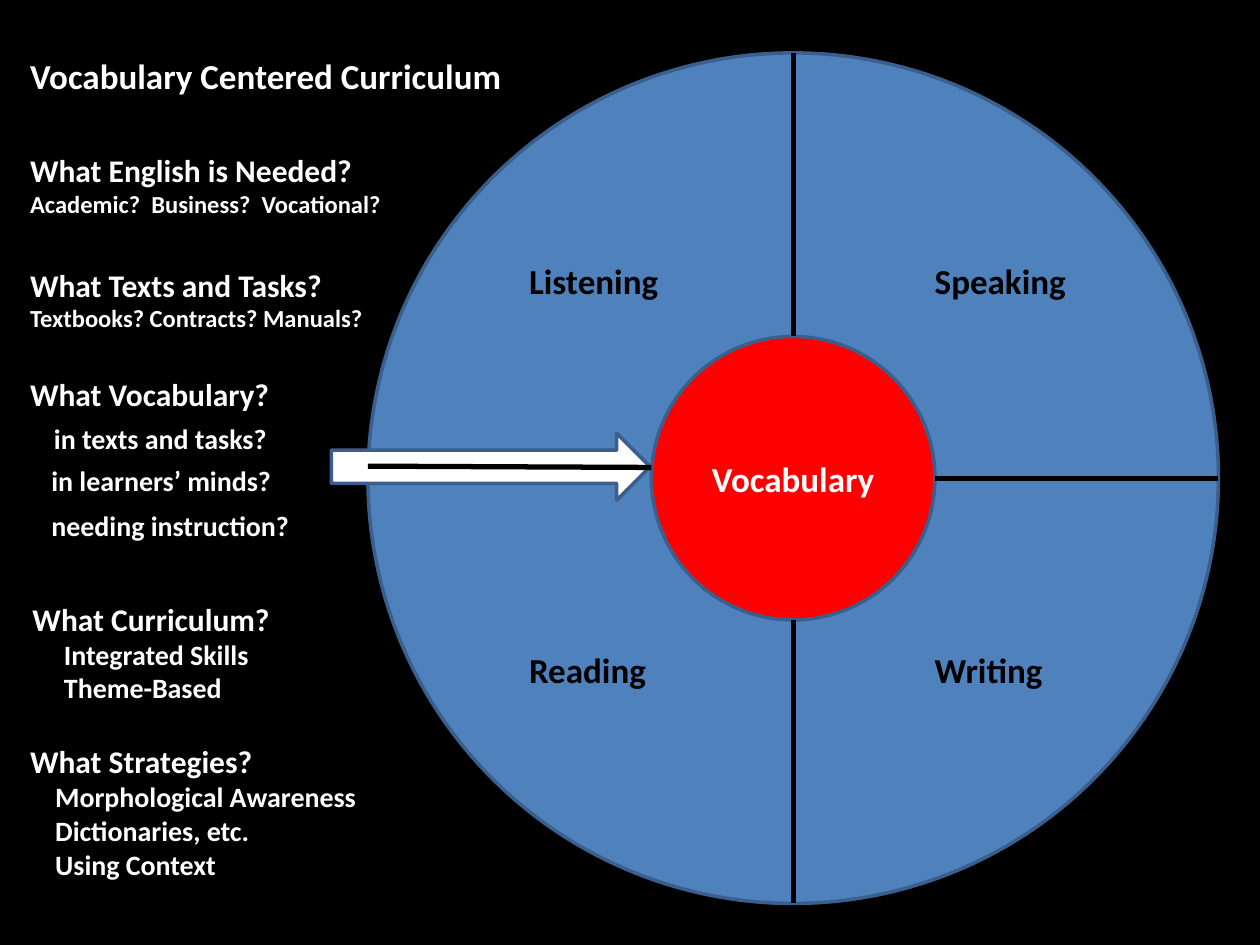
from dataclasses import dataclass

from lxml.etree import SubElement
from pptx import Presentation
from pptx.dml.color import RGBColor
from pptx.enum.shapes import MSO_CONNECTOR, MSO_SHAPE
from pptx.enum.text import MSO_ANCHOR, PP_ALIGN
from pptx.oxml.ns import qn
from pptx.util import Inches, Pt


@dataclass(frozen=True)
class Theme:
    black: str = "000000"
    white: str = "FFFFFF"
    wheel: str = "4F81BD"
    hub: str = "FF0000"
    outline: str = "3A5F8C"
    font: str = "Calibri"
    title: int = 20
    heading: int = 18
    item: int = 16
    detail: int = 14
    outline_width: int = 2
    spoke_width: int = 3


THEME = Theme()


def rgb(value):
    return RGBColor.from_string(value)


def write_text(tf, lines, color=THEME.white, align=PP_ALIGN.LEFT, wrap=True):
    tf.word_wrap = wrap
    for i, (text, size, indent) in enumerate(lines):
        p = tf.paragraphs[0] if i == 0 else tf.add_paragraph()
        p.alignment = align
        if indent:
            p._p.get_or_add_pPr().set("marL", str(Inches(indent)))
        r = p.add_run()
        r.text = text
        r.font.name = THEME.font
        r.font.size = Pt(size)
        r.font.bold = True
        r.font.color.rgb = rgb(color)


def add_text(s, left, top, width, height, lines, **fmt):
    box = s.shapes.add_textbox(Inches(left), Inches(top), Inches(width), Inches(height))
    write_text(box.text_frame, lines, **fmt)


def add_outlined(s, kind, left, top, width, height, fill):
    sp = s.shapes.add_shape(kind, Inches(left), Inches(top), Inches(width), Inches(height))
    sp.shadow.inherit = False
    sp.fill.solid()
    sp.fill.fore_color.rgb = rgb(fill)
    sp.line.color.rgb = rgb(THEME.outline)
    sp.line.width = Pt(THEME.outline_width)
    return sp


def add_spoke(s, x1, y1, x2, y2):
    line = s.shapes.add_connector(
        MSO_CONNECTOR.STRAIGHT, Inches(x1), Inches(y1), Inches(x2), Inches(y2))
    line.line.color.rgb = rgb(THEME.black)
    line.line.width = Pt(THEME.spoke_width)
    SubElement(line._element.spPr, qn("a:effectLst"))


def add_wheel(s, left, top, size):
    third = size / 3
    mid_x, mid_y = left + size / 2, top + size / 2
    right, bottom = left + size, top + size

    add_outlined(s, MSO_SHAPE.OVAL, left, top, size, size, THEME.wheel)
    hub = add_outlined(s, MSO_SHAPE.OVAL, left + third, top + third, third, third, THEME.hub)
    hub.text_frame.vertical_anchor = MSO_ANCHOR.MIDDLE
    write_text(hub.text_frame, [("Vocabulary", THEME.title, 0)], align=PP_ALIGN.CENTER)

    add_outlined(s, MSO_SHAPE.RIGHT_ARROW, left - 0.29, top + 3.02, 2.53, 0.53, THEME.white)
    add_spoke(s, mid_x, top, mid_x, top + third)
    add_spoke(s, right, mid_y, right - third, mid_y)
    add_spoke(s, mid_x, bottom - third, mid_x, bottom)
    add_spoke(s, left, top + 3.28, left + third, top + 3.29)

    skills = [("Listening", "Speaking"), ("Reading", "Writing")]
    for row, dy in zip(skills, (1.59, 4.68)):
        for skill, dx in zip(row, (1.18, 4.4)):
            add_text(s, left + dx, top + dy, 1.61, 0.44,
                     [(skill, THEME.title, 0)], color=THEME.black)


def add_questions(s, left, top):
    heading, item, detail = THEME.heading, THEME.item, THEME.detail
    blocks = [
        (0, 0, 4.11, 0.44, [("Vocabulary Centered Curriculum", THEME.title, 0)], True),
        (0, 0.77, 3.11, 0.64, [("What English is Needed?", heading, 0),
                               ("Academic?  Business?  Vocational?", detail, 0)], True),
        (0, 1.68, 2.92, 0.64, [("What Texts and Tasks?", heading, 0),
                               ("Textbooks? Contracts? Manuals?", detail, 0)], True),
        (0, 2.55, 2.12, 0.4, [("What Vocabulary?", heading, 0)], False),
        (0.19, 2.92, 1.91, 0.37, [("in texts and tasks?", item, 0)], False),
        (0.17, 3.25, 1.97, 0.37, [("in learners’ minds?", item, 0)], False),
        (0.17, 3.61, 2.11, 0.37, [("needing instruction?", item, 0)], False),
        (0.02, 4.33, 2.26, 0.94, [("What Curriculum?", heading, 0),
                                  ("Integrated Skills", item, 0.25),
                                  ("Theme-Based", item, 0.25)], True),
        (0, 5.46, 2.83, 1.21, [("What Strategies?", heading, 0),
                               ("Morphological Awareness", item, 0.2),
                               ("Dictionaries, etc.", item, 0.2),
                               ("Using Context", item, 0.2)], False),
    ]
    for dx, dy, width, height, lines, wrap in blocks:
        add_text(s, left + dx, top + dy, width, height, lines, wrap=wrap)


def main():
    prs = Presentation()
    prs.slide_width, prs.slide_height = Inches(10), Inches(7.5)
    s = prs.slides.add_slide(prs.slide_layouts[6])
    s.background.fill.solid()
    s.background.fill.fore_color.rgb = rgb(THEME.black)
    add_wheel(s, 2.92, 0.42, 6.75)
    add_questions(s, 0.14, 0.38)
    prs.save("out.pptx")


if __name__ == "__main__":
    main()
